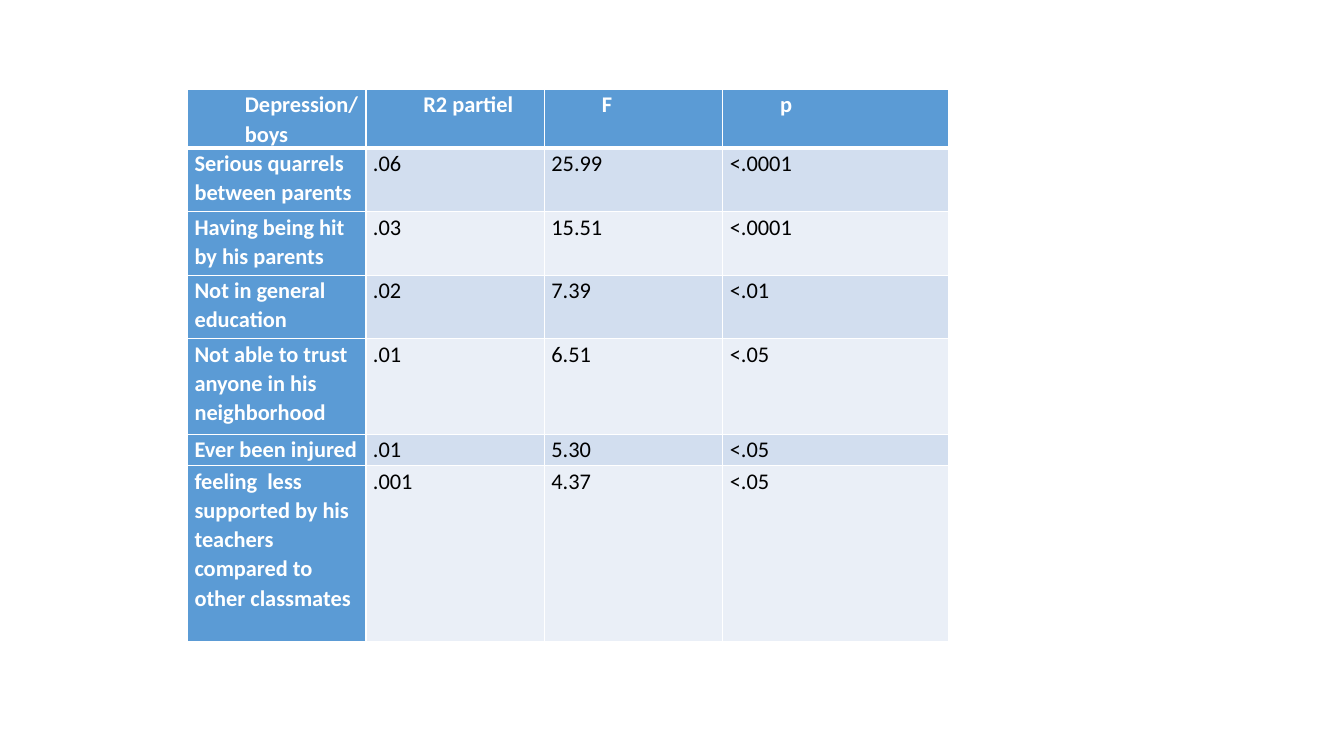
from dataclasses import dataclass

import pptx
import pptx.dml.color
import pptx.enum.text
import pptx.oxml
import pptx.oxml.ns
import pptx.util
from pptx.util import Inches


@dataclass(frozen=True)
class Theme:
    font: str = "Calibri"
    size: int = 16
    heading_fill: str = "5B9BD5"
    heading_text: str = "FFFFFF"
    body_text: str = "000000"
    bands: tuple = ("D2DEEF", "EAEFF7")
    border: str = "FFFFFF"
    thin_border: int = 1
    thick_border: int = 3


THEME = Theme()

COLUMN_WIDTHS = (1.77, 1.77, 1.77, 2.24)
ROW_HEIGHTS = (0.31, 0.63, 0.63, 0.63, 0.95, 0.31, 1.74)
ROWS = (
    ("Depression/boys", "R2 partiel ", "F", "p"),
    ("Serious quarrels between parents", ".06", "25.99", "<.0001"),
    ("Having being hit by his parents", ".03", "15.51", "<.0001"),
    ("Not in general education", ".02", "7.39", "<.01"),
    ("Not able to trust anyone in his neighborhood", ".01", "6.51", "<.05"),
    ("Ever been injured", ".01", "5.30", "<.05"),
    (
        "feeling  less supported by his teachers compared to other classmates",
        ".001", "4.37", "<.05",
    ),
)


def rgb(value):
    return pptx.dml.color.RGBColor.from_string(value)


def set_borders(cell, row):
    """Draw thin cell borders, with a thick rule below the header row."""
    top = THEME.thick_border if row == 1 else THEME.thin_border
    bottom = THEME.thick_border if row == 0 else THEME.thin_border
    widths = {"lnL": THEME.thin_border, "lnR": THEME.thin_border,
              "lnT": top, "lnB": bottom}
    properties = cell._tc.get_or_add_tcPr()
    for side, width in widths.items():
        properties.append(pptx.oxml.parse_xml(
            f'<a:{side} {pptx.oxml.ns.nsdecls("a")} w="{pptx.util.Pt(width)}">'
            f'<a:solidFill><a:srgbClr val="{THEME.border}"/></a:solidFill>'
            f'</a:{side}>'
        ))


def format_cell(cell, text, row, column):
    is_heading = row == 0 or column == 0
    set_borders(cell, row)
    cell.fill.solid()
    fill = THEME.heading_fill if is_heading else THEME.bands[(row - 1) % 2]
    cell.fill.fore_color.rgb = rgb(fill)
    cell.margin_left = cell.margin_right = Inches(0.07)
    cell.margin_top = cell.margin_bottom = 0

    cell.text_frame.text = text
    paragraph = cell.text_frame.paragraphs[0]
    paragraph.line_spacing = 1.07
    alignment = pptx.enum.text.PP_ALIGN
    is_row_label = row > 0 and column == 0
    paragraph.alignment = alignment.LEFT if is_row_label else alignment.JUSTIFY
    if row == 0:
        paragraph_properties = paragraph._p.get_or_add_pPr()
        paragraph_properties.set("marL", str(Inches(0.5)))
        paragraph_properties.set("indent", "0")

    font = paragraph.runs[0].font
    font.name = THEME.font
    font.size = pptx.util.Pt(THEME.size)
    font.bold = is_heading
    font.color.rgb = rgb(THEME.heading_text if is_heading else THEME.body_text)


def add_regression_table(slide):
    table = slide.shapes.add_table(
        len(ROWS), len(COLUMN_WIDTHS), Inches(1.86), Inches(0.89),
        Inches(sum(COLUMN_WIDTHS)), Inches(sum(ROW_HEIGHTS)),
    ).table
    table.first_col = True
    for column, width in zip(table.columns, COLUMN_WIDTHS):
        column.width = Inches(width)
    for row, height in zip(table.rows, ROW_HEIGHTS):
        row.height = Inches(height)
    for row, texts in enumerate(ROWS):
        for column, text in enumerate(texts):
            format_cell(table.cell(row, column), text, row, column)


def main():
    presentation = pptx.Presentation()
    presentation.slide_width = Inches(13.33)
    presentation.slide_height = Inches(7.5)
    blank_layout = presentation.slide_layouts.get_by_name("Blank")
    slide = presentation.slides.add_slide(blank_layout)
    add_regression_table(slide)
    presentation.save("out.pptx")


if __name__ == "__main__":
    main()
